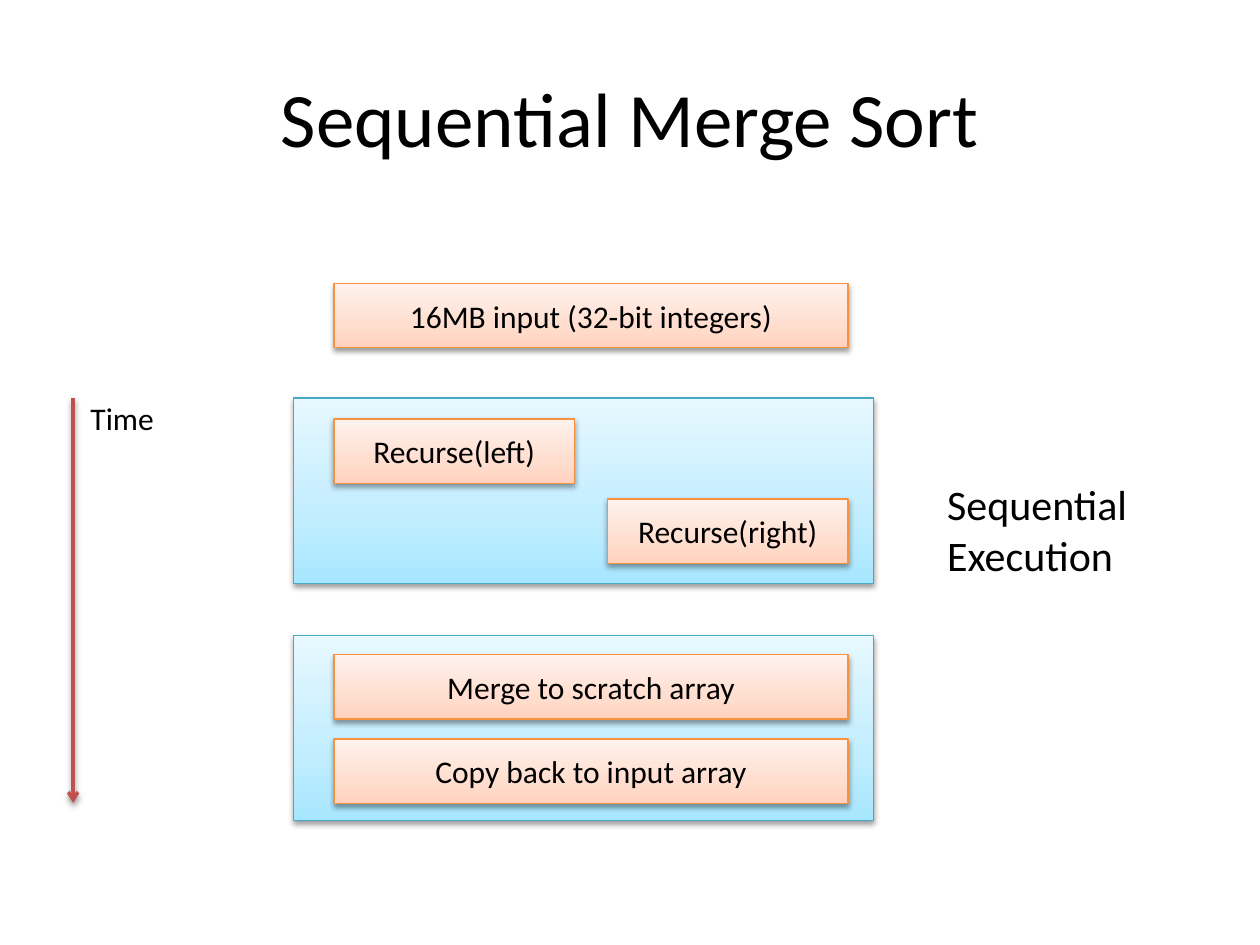
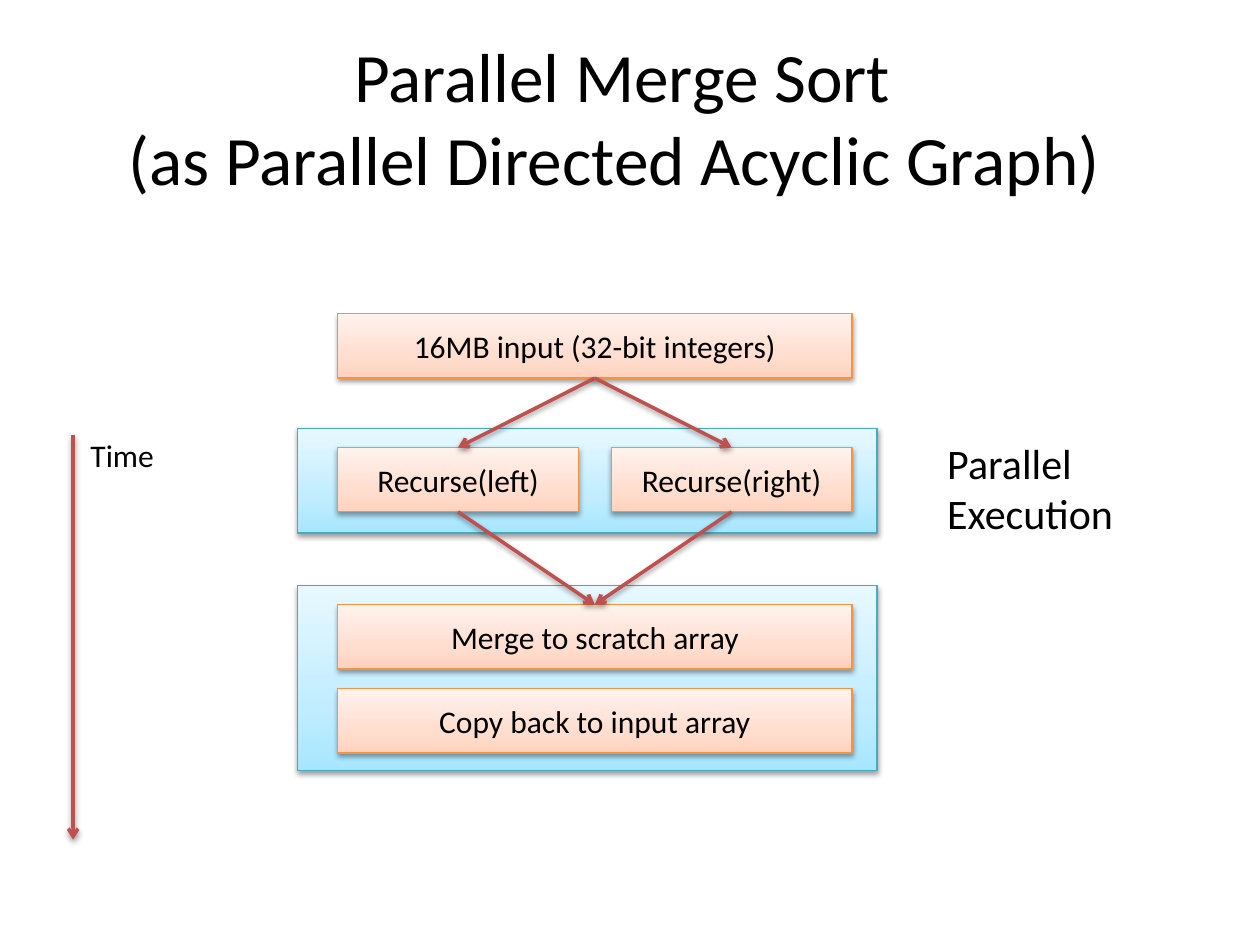
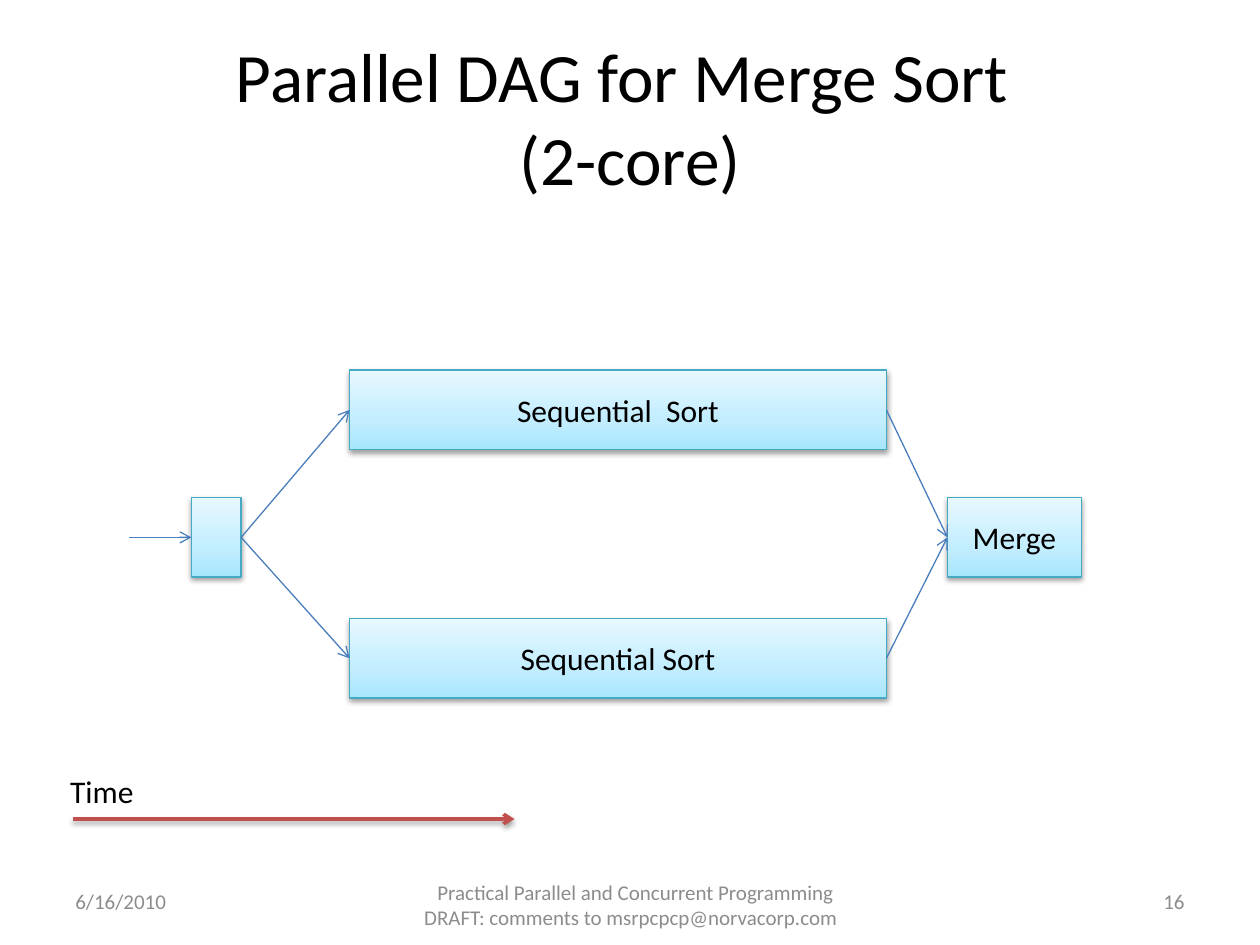
import dataclasses
import lxml.etree
import pptx
import pptx.dml.color
import pptx.enum.shapes
import pptx.enum.text
import pptx.oxml.ns
import pptx.util

Pt = pptx.util.Pt
qn = pptx.oxml.ns.qn
ALIGN = pptx.enum.text.PP_ALIGN
ANCHOR = pptx.enum.text.MSO_ANCHOR
AUTO_SIZE = pptx.enum.text.MSO_AUTO_SIZE
TOP, LEFT, BOTTOM, RIGHT = range(4)


@dataclasses.dataclass(frozen=True)
class Theme:
    font: str = "Calibri"
    text: str = "000000"
    muted: str = "8C8C8C"
    accent: str = "C0504D"
    thin_arrow: str = "4B7EBC"
    # Line colour, then gradient stops (percent, colour) from bottom to top
    orange: tuple = ("F69240", ((0, "FFD2BD"), (35, "FFDED0"), (100, "FFF2ED")))
    blue: tuple = ("46AAC5", ((0, "A7E6FF"), (35, "C1EDFF"), (100, "E7F8FF")))
    title: float = 44
    title_two_lines: float = 39.6
    label: float = 24
    body: float = 18
    footer: float = 12
    outline: float = 0.75
    arrow: float = 2


THEME = Theme()

# Lengths in points
TITLE_BOX = (36, 21.6, 648, 90)
BOX_WIDTH, HALF_WIDTH, BOX_HEIGHT = 293.8, 137.5, 36.8
PANEL_WIDTH, PANEL_INSET, PANEL_GAP, PANEL_DROP = 331.2, 23, 30, 65.5
TALL_PANEL = 105.8
MERGE_STEPS = [("Merge to scratch array", 10.9), ("Copy back to input array", 59)]
INPUT_TEXT = "16MB input (32-bit integers)"
TIME_X, TIME_LENGTH = 41.8, 231.4

FLOWS = [
    {"title": ["Sequential Merge Sort"], "title_size": THEME.title,
     "left": 167.8, "top": 162, "recurse_panel": TALL_PANEL,
     "recurse": [("Recurse(left)", 12), ("Recurse(right)", 57.6)],
     "time_top": 227.5, "parallel": False,
     "label": ["Sequential", "Execution"], "label_box": (534.2, 270, 119, 65.5)},
    {"title": ["Parallel Merge Sort ", "(as Parallel Directed Acyclic Graph)  "],
     "title_size": THEME.title_two_lines,
     "left": 170, "top": 179.3, "recurse_panel": 59.8,
     "recurse": [("Recurse(left)", 10.9), ("Recurse(right)", 10.9)],
     "time_top": 248.4, "parallel": True,
     "label": ["Parallel", "Execution"], "label_box": (534.2, 246.2, 110, 65.5)},
]

DAG_TITLE = ["Parallel DAG for Merge Sort ", "(2-core)"]
NODE_HEIGHT = 45.4
NODES = {  # name: (text, left, top, width)
    "fork": ("", 109.4, 284.4, 28.4),
    "upper": ("Sequential  Sort", 199.8, 211.5, 306.7),
    "join": ("Merge", 541.4, 284.4, 76.6),
    "lower": ("Sequential Sort", 199.8, 353.5, 306.7),
}
EDGES = [("fork", "upper"), ("fork", "lower"), ("upper", "join"), ("lower", "join")]
ENTRY = (74, 307.1, 109.4, 307.1)
FOOTERS = [
    ("Practical Parallel and Concurrent Programming DRAFT: comments to "
     "msrpcpcp@norvacorp.com  ", (228.2, 506.2, 270, 21.6), ALIGN.CENTER),
    ("16", (516.2, 500.4, 167.8, 28.8), ALIGN.RIGHT),
    ("6/16/2010", (36, 500.4, 167.8, 28.8), ALIGN.LEFT),
]


def points(values):
    return [Pt(value) for value in values]


def rgb(color):
    return pptx.dml.color.RGBColor.from_string(color)


def add_element(parent, tag, **attributes):
    return lxml.etree.SubElement(parent, qn(tag), attributes)


def add_run(paragraph, text, size, color=THEME.text):
    run = paragraph.add_run()
    run.text = text
    run.font.name = THEME.font
    run.font.size = Pt(size)
    run.font.color.rgb = rgb(color)


def add_shadow(effects):
    shadow = add_element(effects, "a:outerShdw", blurRad="40000", dist="20000",
                         dir="5400000", rotWithShape="0")
    color = add_element(shadow, "a:srgbClr", val="000000")
    add_element(color, "a:alpha", val="38000")


def add_slide(presentation, title_lines, title_size):
    slide = presentation.slides.add_slide(presentation.slide_layouts[5])
    title = slide.shapes.title
    title.left, title.top, title.width, title.height = points(TITLE_BOX)
    frame = title.text_frame
    frame.auto_size = AUTO_SIZE.NONE
    frame.vertical_anchor = ANCHOR.MIDDLE
    paragraph = frame.paragraphs[0]
    paragraph.alignment = ALIGN.CENTER
    for index, line in enumerate(title_lines):
        if index:
            paragraph.add_line_break()
        add_run(paragraph, line, title_size)
    return slide


def add_box(shapes, text, bounds, style):
    """Add a gradient rectangle with a soft shadow and optional centred text."""
    line_color, stops = style
    box = shapes.add_shape(pptx.enum.shapes.MSO_SHAPE.RECTANGLE, *points(bounds))
    box.fill.gradient()
    box.fill.gradient_angle = 90
    properties = box.element.spPr
    stop_list = properties.find(".//" + qn("a:gsLst"))
    for stop in list(stop_list):
        stop_list.remove(stop)
    for percent, color in stops:
        stop = add_element(stop_list, "a:gs", pos=str(percent * 1000))
        add_element(stop, "a:srgbClr", val=color)
    box.line.color.rgb = rgb(line_color)
    box.line.width = Pt(THEME.outline)
    box.shadow.inherit = False
    add_shadow(properties.find(qn("a:effectLst")))
    if text:
        box.text_frame.vertical_anchor = ANCHOR.MIDDLE
        paragraph = box.text_frame.paragraphs[0]
        paragraph.alignment = ALIGN.CENTER
        add_run(paragraph, text, THEME.body)
    return box


def add_arrow(slide, ends=(0, 0, 0, 0), thin=False):
    arrow = slide.shapes.add_connector(
        pptx.enum.shapes.MSO_CONNECTOR.STRAIGHT, *points(ends))
    arrow.line.color.rgb = rgb(THEME.thin_arrow if thin else THEME.accent)
    arrow.line.width = Pt(THEME.outline if thin else THEME.arrow)
    properties = arrow.element.spPr
    add_element(properties.find(qn("a:ln")), "a:tailEnd", type="arrow")
    effects = add_element(properties, "a:effectLst")
    if not thin:
        add_shadow(effects)
    return arrow


def join(slide, start, start_side, end, end_side, thin=False):
    arrow = add_arrow(slide, thin=thin)
    arrow.begin_connect(start, start_side)
    arrow.end_connect(end, end_side)


def add_label(slide, lines, bounds, size):
    label = slide.shapes.add_textbox(*points(bounds))
    frame = label.text_frame
    frame.word_wrap = False
    frame.auto_size = AUTO_SIZE.SHAPE_TO_FIT_TEXT
    for index, line in enumerate(lines):
        paragraph = frame.add_paragraph() if index else frame.paragraphs[0]
        add_run(paragraph, line, size)


def add_time_label(slide, left, top):
    add_label(slide, ["Time"], (left, top, 51, 29), THEME.body)


def add_panel(slide, left, top, height, boxes):
    """Group a blue panel with its orange boxes, given as (text, bounds)."""
    shapes = slide.shapes.add_group_shape().shapes
    add_box(shapes, "", (left, top, PANEL_WIDTH, height), THEME.blue)
    return [add_box(shapes, text, bounds, THEME.orange) for text, bounds in boxes]


def build_flow(presentation, flow):
    slide = add_slide(presentation, flow["title"], flow["title_size"])
    left, top = flow["left"], flow["top"]
    box_left = left + PANEL_INSET
    source = add_box(slide.shapes, INPUT_TEXT,
                     (box_left, top, BOX_WIDTH, BOX_HEIGHT), THEME.orange)

    recurse_top = top + PANEL_DROP
    half_lefts = (box_left, box_left + BOX_WIDTH - HALF_WIDTH)
    halves = add_panel(slide, left, recurse_top, flow["recurse_panel"], [
        (text, (half_left, recurse_top + offset, HALF_WIDTH, BOX_HEIGHT))
        for half_left, (text, offset) in zip(half_lefts, flow["recurse"])])

    merge_top = recurse_top + flow["recurse_panel"] + PANEL_GAP
    merge, _ = add_panel(slide, left, merge_top, TALL_PANEL, [
        (text, (box_left, merge_top + offset, BOX_WIDTH, BOX_HEIGHT))
        for text, offset in MERGE_STEPS])

    time_top = flow["time_top"]
    add_arrow(slide, (TIME_X, time_top, TIME_X, time_top + TIME_LENGTH))
    add_time_label(slide, 44.6, time_top - 3)
    if flow["parallel"]:
        for half in halves:
            join(slide, source, BOTTOM, half, TOP)
            join(slide, half, BOTTOM, merge, TOP)
    add_label(slide, flow["label"], flow["label_box"], THEME.label)


def add_footer(slide, text, bounds, alignment):
    footer = slide.shapes.add_textbox(*points(bounds))
    frame = footer.text_frame
    frame.word_wrap = True
    frame.vertical_anchor = ANCHOR.MIDDLE
    paragraph = frame.paragraphs[0]
    paragraph.alignment = alignment
    add_run(paragraph, text, THEME.footer, THEME.muted)


def build_dag(presentation):
    slide = add_slide(presentation, DAG_TITLE, THEME.title_two_lines)
    nodes = {name: add_box(slide.shapes, text, (left, top, width, NODE_HEIGHT), THEME.blue)
             for name, (text, left, top, width) in NODES.items()}
    for start, end in EDGES:
        join(slide, nodes[start], RIGHT, nodes[end], LEFT, thin=True)
    add_arrow(slide, ENTRY, thin=True).end_connect(nodes["fork"], LEFT)
    for footer in FOOTERS:
        add_footer(slide, *footer)
    add_arrow(slide, (TIME_X, 468, 294, 468))
    add_time_label(slide, 33, 437.8)


def main():
    presentation = pptx.Presentation()
    presentation.slide_width, presentation.slide_height = points((720, 540))
    for flow in FLOWS:
        build_flow(presentation, flow)
    build_dag(presentation)
    presentation.save("out.pptx")


if __name__ == "__main__":
    main()
